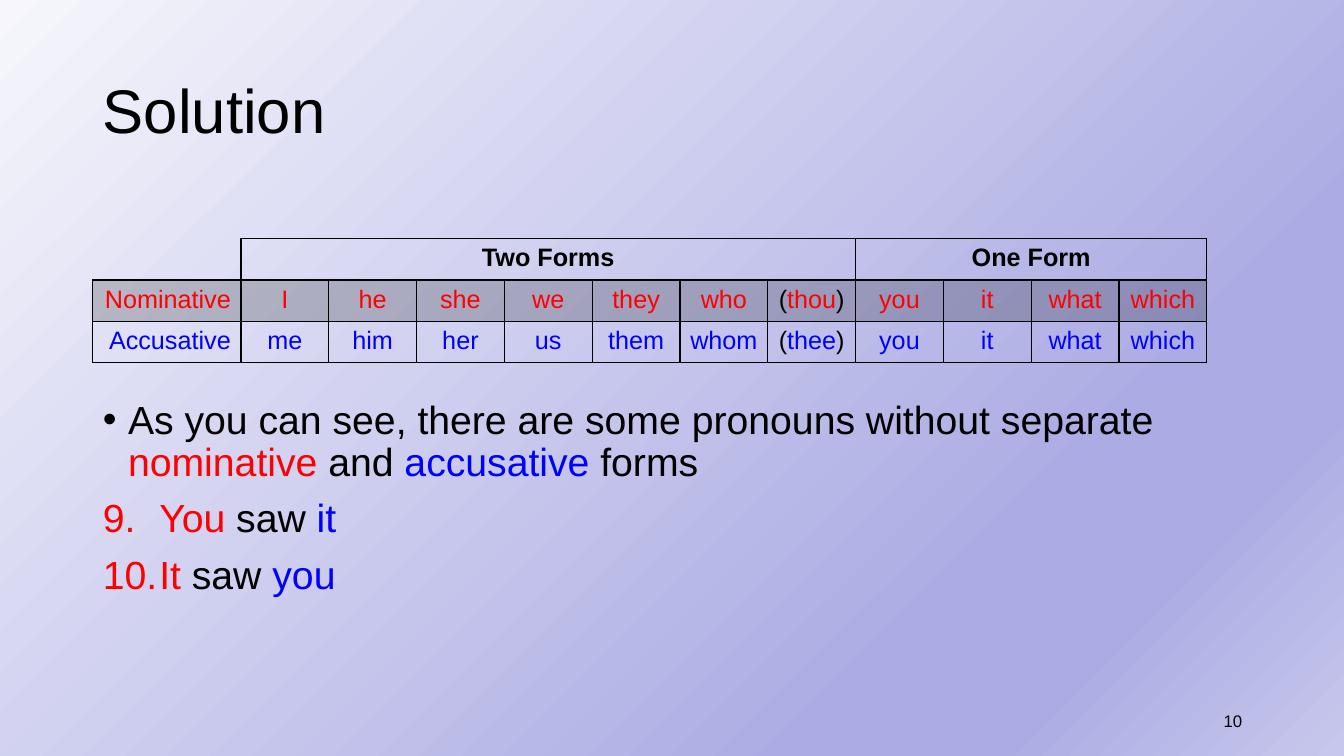
"""Build the pronoun solution slide with its table of nominative and accusative forms."""
from lxml import etree
from pptx import Presentation
from pptx import util as u
from pptx.dml.color import RGBColor
from pptx.enum import text
from pptx.oxml.ns import qn

BLACK = RGBColor(0x00, 0x00, 0x00)
RED = RGBColor(0xFF, 0x00, 0x00)
BLUE = RGBColor(0x00, 0x00, 0xFF)
PALE = RGBColor(0xF6, 0xF6, 0xFC)
LAVENDER = RGBColor(0xAC, 0xAC, 0xE4)
LILAC = RGBColor(0xC7, 0xC7, 0xED)

LEFT, CENTER, RIGHT = text.PP_ALIGN.LEFT, text.PP_ALIGN.CENTER, text.PP_ALIGN.RIGHT
TOP, MIDDLE = text.MSO_ANCHOR.TOP, text.MSO_ANCHOR.MIDDLE

NOMINATIVE = ["I", "he", "she", "we", "they", "who", "(thou)", "you", "it", "what", "which"]
ACCUSATIVE = ["me", "him", "her", "us", "them", "whom", "(thee)", "you", "it", "what", "which"]
HEADINGS = [("Two Forms", 1, 7), ("One Form", 8, 11)]


def add_node(parent, tag, **attributes):
    return etree.SubElement(parent, qn(tag), attributes)


class SlideBuilder:
    font = "Arial"

    def __init__(self, deck):
        self.page = deck.slides.add_slide(deck.slide_layouts[1])

    def background(self, stops, angle):
        fill = self.page.background.fill
        fill.gradient()
        fill.gradient_angle = angle
        stop_list = next(self.page.element.iter(qn("a:gsLst")))
        for stop in list(stop_list):
            stop_list.remove(stop)
        for percent, color in stops:
            stop = add_node(stop_list, "a:gs", pos=str(percent * 1000))
            add_node(stop, "a:srgbClr", val=str(color))

    def place(self, box, left, top, width, height, anchor):
        box.left, box.top = u.Inches(left), u.Inches(top)
        box.width, box.height = u.Inches(width), u.Inches(height)
        frame = box.text_frame
        frame.word_wrap = True
        frame.auto_size = text.MSO_AUTO_SIZE.NONE
        frame.vertical_anchor = anchor
        return frame

    def add_spans(self, para, spans, size, align=LEFT, bold=False):
        para.alignment = align
        for words, color in spans:
            span = para.add_run()
            span.text = words
            span.font.name = self.font
            span.font.size = u.Pt(size)
            span.font.bold = bold
            span.font.color.rgb = color

    def title(self, words, *area):
        para = self.place(self.page.shapes.title, *area, MIDDLE).paragraphs[0]
        para.line_spacing = 0.9
        self.add_spans(para, [(words, BLACK)], 44)

    def body(self, items, *area):
        frame = self.place(self.page.placeholders[1], *area, TOP)
        for index, (start, spans) in enumerate(items):
            para = frame.add_paragraph() if index else frame.paragraphs[0]
            para.line_spacing = 0.9
            para.space_before = u.Pt(10)
            self.add_spans(para, spans, 28)
            self.bullet(para, start)

    def bullet(self, para, start):
        indent = u.Inches(0.56 if start else 0.25)
        props = para._p.get_or_add_pPr()
        props.set("marL", str(indent))
        props.set("indent", str(-indent))
        add_node(props, "a:buFont", typeface=self.font)
        if start:
            add_node(props, "a:buAutoNum", type="arabicPeriod", startAt=str(start))
        else:
            add_node(props, "a:buChar", char="•")

    def label(self, words, *area):
        box = self.page.shapes.add_textbox(0, 0, 0, 0)
        para = self.place(box, *area, MIDDLE).paragraphs[0]
        self.add_spans(para, [(words, BLACK)], 12, RIGHT)

    def cell_style(self, cell, widths, shaded):
        if shaded:
            cell.fill.solid()
            cell.fill.fore_color.rgb = BLACK
        else:
            cell.fill.background()
        props = cell._tc.get_or_add_tcPr()
        for color in props.iter(qn("a:srgbClr")):
            add_node(color, "a:alpha", val="20000")
        for index, (side, width) in enumerate(zip("LRTB", widths)):
            line = add_node(props, f"a:ln{side}", w=str(u.Pt(width)))
            if width:
                solid = add_node(line, "a:solidFill")
                add_node(solid, "a:srgbClr", val=str(BLACK))
            else:
                add_node(line, "a:noFill")
            props.insert(index, line)

    def pronoun_table(self, left, top, width, row_height, label_width):
        count = len(NOMINATIVE) + 1
        frame = self.page.shapes.add_table(
            3, count, u.Inches(left), u.Inches(top), u.Inches(width), u.Inches(3 * row_height))
        table = frame.table
        table.first_row = table.horz_banding = False
        for index, column in enumerate(table.columns):
            column.width = u.Inches(
                (width - label_width) / (count - 1) if index else label_width)
        for index, row in enumerate(table.rows):
            row.height = u.Inches(row_height)
            for position, cell in enumerate(row.cells):
                outer = 1 if index or position else 0
                widths = (outer, 1, 2 if index == 1 else outer, 1 if index else 2)
                self.cell_style(cell, widths, shaded=index == 1)
        for words, first, last in HEADINGS:
            cell = table.cell(0, first)
            cell.merge(table.cell(0, last))
            self.add_spans(cell.text_frame.paragraphs[0], [(words, BLACK)], 18, CENTER, True)
        rows = [(["Nominative"] + NOMINATIVE, RED), (["Accusative"] + ACCUSATIVE, BLUE)]
        for index, (forms, color) in enumerate(rows, 1):
            for position, form in enumerate(forms):
                spans = [(form, color)]
                if form.startswith("("):
                    spans = [("(", BLACK), (form.strip("()"), color), (")", BLACK)]
                para = table.cell(index, position).text_frame.paragraphs[0]
                self.add_spans(para, spans, 18, CENTER if position else RIGHT)


def main():
    deck = Presentation()
    deck.slide_width, deck.slide_height = u.Inches(13.33), u.Inches(7.5)
    slide = SlideBuilder(deck)
    slide.background([(0, PALE), (74, LAVENDER), (83, LAVENDER), (100, LILAC)], 315)
    slide.title("Solution", 0.92, 0.4, 11.5, 1.45)
    slide.body([
        (None, [("As you can see, there are some pronouns without separate ", BLACK),
                ("nominative", RED), (" and ", BLACK), ("accusative", BLUE), (" forms", BLACK)]),
        (9, [("You", RED), (" saw ", BLACK), ("it", BLUE)]),
        (9, [("It", RED), (" saw ", BLACK), ("you", BLUE)]),
    ], 0.92, 3.92, 11.5, 2.84)
    slide.label("10", 9.42, 6.95, 3, 0.4)
    slide.pronoun_table(0.92, 2.37, 11.05, 0.41, 1.47)
    deck.save("out.pptx")


if __name__ == "__main__":
    main()
